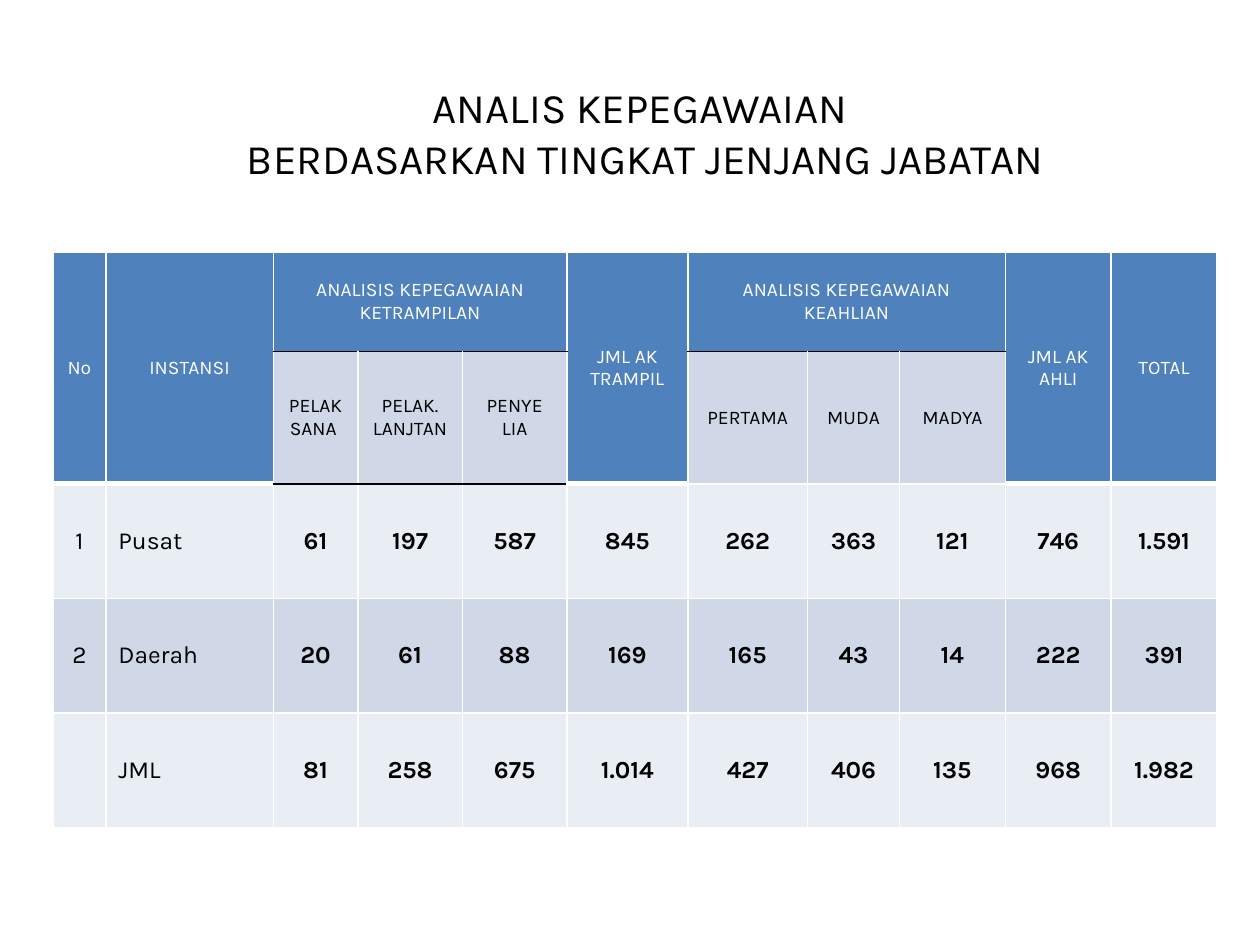
from lxml import etree
from pptx import Presentation
from pptx import util as u
from pptx.dml.color import RGBColor
from pptx.enum import text
from pptx.oxml import ns

FONT = "Karla"
WHITE, BLACK = "FFFFFF", "000000"
HEADER, BAND_DARK, BAND_LIGHT = "4F81BD", "D0D8E8", "E9EDF4"

COLUMN_WIDTHS = [0.42, 1.33, 0.67, 0.83, 0.83, 0.96, 0.95, 0.73, 0.84, 0.84, 0.84]
ROW_HEIGHTS = [0.79, 1.05, 0.91, 0.91, 0.91]

# Headings by first column: those over one column run down two rows
TALL_HEADINGS = {0: "No", 1: "INSTANSI", 5: "JML AK TRAMPIL",
                 9: "JML AK AHLI", 10: "TOTAL"}
GROUPS = {
    2: ("ANALISIS KEPEGAWAIAN KETRAMPILAN",
        ["PELAK SANA ", "PELAK. LANJTAN", "PENYE LIA"]),
    6: ("ANALISIS KEPEGAWAIAN KEAHLIAN", ["PERTAMA", "MUDA", "MADYA"]),
}
AGENCIES = [
    ["1", "Pusat", "61", "197", "587", "845", "262", "363", "121", "746", "1.591"],
    ["2", "Daerah", "20", "61", "88", "169", "165", "43", "14", "222", "391"],
    ["", "JML", "81", "258", "675", "1.014", "427", "406", "135", "968", "1.982"],
]


def rgb(hex_code):
    return RGBColor.from_string(hex_code)


def write(frame, lines, size=11, color=BLACK, bold=False, align="CENTER"):
    """Fill a text frame with one paragraph per line."""
    frame.word_wrap = True
    for index, line in enumerate(lines):
        paragraph = frame.add_paragraph() if index else frame.paragraphs[0]
        paragraph.alignment = getattr(text.PP_ALIGN, align)
        font_holder = paragraph.add_run()
        font_holder.text = line
        font = font_holder.font
        font.name, font.size, font.bold = FONT, u.Pt(size), bold
        font.color.rgb = rgb(color)


def set_borders(cell, top=WHITE, bottom=WHITE, bottom_width=1):
    """Draw all four sides; left and right are always thin white."""
    properties = cell._tc.get_or_add_tcPr()
    sides = [("L", WHITE, 1), ("R", WHITE, 1),
             ("T", top, 1), ("B", bottom, bottom_width)]
    for side, color, width in sides:
        line = etree.SubElement(properties, ns.qn(f"a:ln{side}"), w=str(u.Pt(width)))
        fill = etree.SubElement(line, ns.qn("a:solidFill"))
        etree.SubElement(fill, ns.qn("a:srgbClr"), val=color)


def fill_cell(cell, label, fill, borders=None, **style):
    set_borders(cell, **(borders or {}))
    cell.fill.solid()
    cell.fill.fore_color.rgb = rgb(fill)
    cell.vertical_anchor = text.MSO_ANCHOR.MIDDLE
    if label:
        write(cell.text_frame, [label], **style)


def add_title(slide):
    box = slide.shapes.add_textbox(*map(u.Inches, (1.22, 0.6, 7.8, 0.91)))
    write(box.text_frame,
          ["ANALIS KEPEGAWAIAN ", "BERDASARKAN TINGKAT JENJANG JABATAN"], size=24)


def add_grid(slide):
    frame = slide.shapes.add_table(
        len(ROW_HEIGHTS), len(COLUMN_WIDTHS), u.Inches(0.42), u.Inches(2),
        u.Inches(sum(COLUMN_WIDTHS)), u.Inches(sum(ROW_HEIGHTS)))
    grid = frame.table
    for column, width in zip(grid.columns, COLUMN_WIDTHS):
        column.width = u.Inches(width)
    for row, height in zip(grid.rows, ROW_HEIGHTS):
        row.height = u.Inches(height)
    return grid


def fill_headings(grid):
    for column, label in TALL_HEADINGS.items():
        fill_cell(grid.cell(0, column), label, HEADER, {"bottom_width": 3}, color=WHITE)
        fill_cell(grid.cell(1, column), "", HEADER)
        grid.cell(0, column).merge(grid.cell(1, column))

    for start, (group, levels) in GROUPS.items():
        level_bottom = BLACK if start == 2 else WHITE
        for offset, level in enumerate(levels):
            column = start + offset
            fill_cell(grid.cell(0, column), "" if offset else group, HEADER,
                      {"bottom": BLACK}, color=WHITE)
            fill_cell(grid.cell(1, column), level, BAND_DARK,
                      {"top": BLACK, "bottom": level_bottom})
        grid.cell(0, start).merge(grid.cell(0, start + len(levels) - 1))


def fill_agencies(grid):
    for index, agency in enumerate(AGENCIES):
        band = BAND_DARK if index % 2 else BAND_LIGHT
        for column, value in enumerate(agency):
            under_rule = index == 0 and column in (2, 3, 4)
            fill_cell(grid.cell(index + 2, column), value, band,
                      {"top": BLACK if under_rule else WHITE},
                      size=14, bold=column > 1,
                      align="LEFT" if column == 1 else "CENTER")


def main():
    deck = Presentation()
    deck.slide_width, deck.slide_height = u.Inches(10), u.Inches(7.5)
    slide = deck.slides.add_slide(deck.slide_layouts[6])

    # Title
    add_title(slide)

    # Staff counts by level
    grid = add_grid(slide)
    fill_headings(grid)
    fill_agencies(grid)

    deck.save("out.pptx")


if __name__ == "__main__":
    main()
